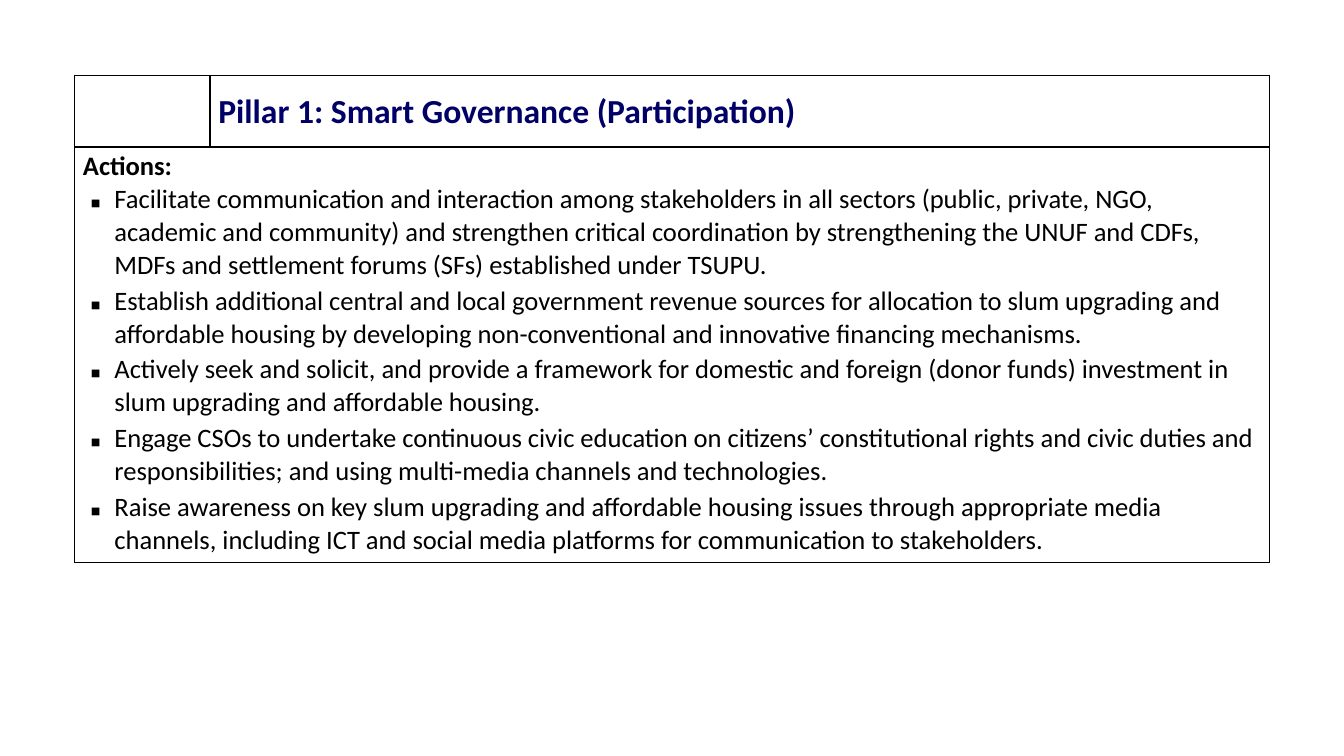
from dataclasses import dataclass

from lxml import etree
from pptx import Presentation
from pptx.dml.color import RGBColor
from pptx.enum import text
from pptx.oxml import ns
from pptx.util import Pt

PX = 9525  # EMU per px, 96 px to the inch


@dataclass(frozen=True)
class Theme:
    font: str = "Calibri"
    heading: str = "000066"
    body: str = "000000"
    border: str = "000000"
    heading_size: int = 24
    body_size: int = 19
    line_spacing: float = 1.02
    border_width: int = 1


THEME = Theme()
COLUMNS = (129, 1009)
ROWS = (68, 396)
HEADING = "Pillar 1: Smart Governance (Participation)"
ACTIONS = (
    "Facilitate communication and interaction among stakeholders in all sectors "
    "(public, private, NGO, academic and community) and strengthen critical "
    "coordination by strengthening the UNUF and CDFs, MDFs and settlement forums "
    "(SFs) established under TSUPU.",
    "Establish additional central and local government revenue sources for "
    "allocation to slum upgrading and affordable housing by developing "
    "non-conventional and innovative financing mechanisms.",
    "Actively seek and solicit, and provide a framework for domestic and foreign "
    "(donor funds) investment in slum upgrading and affordable housing.",
    "Engage CSOs to undertake continuous civic education on citizens’ "
    "constitutional rights and civic duties and responsibilities; and using "
    "multi-media channels and technologies.",
    "Raise awareness on key slum upgrading and affordable housing issues through "
    "appropriate media channels, including ICT and social media platforms for "
    "communication to stakeholders.",
)


def px(n):
    return n * PX


def sub(parent, tag, **attrs):
    return etree.SubElement(parent, ns.qn(tag), attrs)


def add_bullet(p, char="▪", indent=30, hanging=23):
    pPr = p._p.get_or_add_pPr()
    pPr.set("marL", str(px(indent)))
    pPr.set("indent", str(-px(hanging)))
    sub(pPr, "a:buFont", typeface="Noto Sans Symbols")
    sub(pPr, "a:buChar", char=char)


def write(tf, words, *, size=THEME.body_size, color=THEME.body, bold=False,
          align=None, after=0, bullet=False):
    """Fill the frame's first paragraph if it is empty, else add another."""
    p = tf.paragraphs[-1]
    if p.runs:
        p = tf.add_paragraph()
    p.alignment = align
    p.line_spacing = THEME.line_spacing
    p.space_after = Pt(after)
    if bullet:
        add_bullet(p)
    r = p.add_run()
    r.text = words
    r.font.name = THEME.font
    r.font.size = Pt(size)
    r.font.bold = bold
    r.font.color.rgb = RGBColor.from_string(color)


def style_cell(cell):
    """Give the cell thin margins, four borders and no fill."""
    cell.margin_left = cell.margin_right = px(8)
    cell.margin_top = cell.margin_bottom = px(3)
    tcPr = cell._tc.get_or_add_tcPr()
    for side in "LRTB":
        ln = sub(tcPr, f"a:ln{side}", w=str(Pt(THEME.border_width)))
        sub(sub(ln, "a:solidFill"), "a:srgbClr", val=THEME.border)
    cell.fill.background()


def add_grid(slide, left, top, columns, rows):
    frame = slide.shapes.add_table(len(rows), len(columns), px(left), px(top),
                                   px(sum(columns)), px(sum(rows)))
    table = frame.table
    table.first_row = table.horz_banding = False
    for column, width in zip(table.columns, columns):
        column.width = px(width)
    for row, height in zip(table.rows, rows):
        row.height = px(height)
    for cell in table.iter_cells():
        style_cell(cell)
    return table


def main():
    prs = Presentation()
    prs.slide_width, prs.slide_height = px(1280), px(720)
    slide = prs.slides.add_slide(prs.slide_layouts[6])

    table = add_grid(slide, 71, 72, COLUMNS, ROWS)
    heading, actions = table.cell(0, 1), table.cell(1, 0)
    actions.merge(table.cell(1, 1))

    heading.vertical_anchor = text.MSO_ANCHOR.MIDDLE
    write(heading.text_frame, HEADING, size=THEME.heading_size,
          color=THEME.heading, bold=True, after=8)
    write(actions.text_frame, "Actions:", bold=True,
          align=text.PP_ALIGN.JUSTIFY)
    for action in ACTIONS:
        write(actions.text_frame, action, after=2, bullet=True)

    prs.save("out.pptx")


if __name__ == "__main__":
    main()
